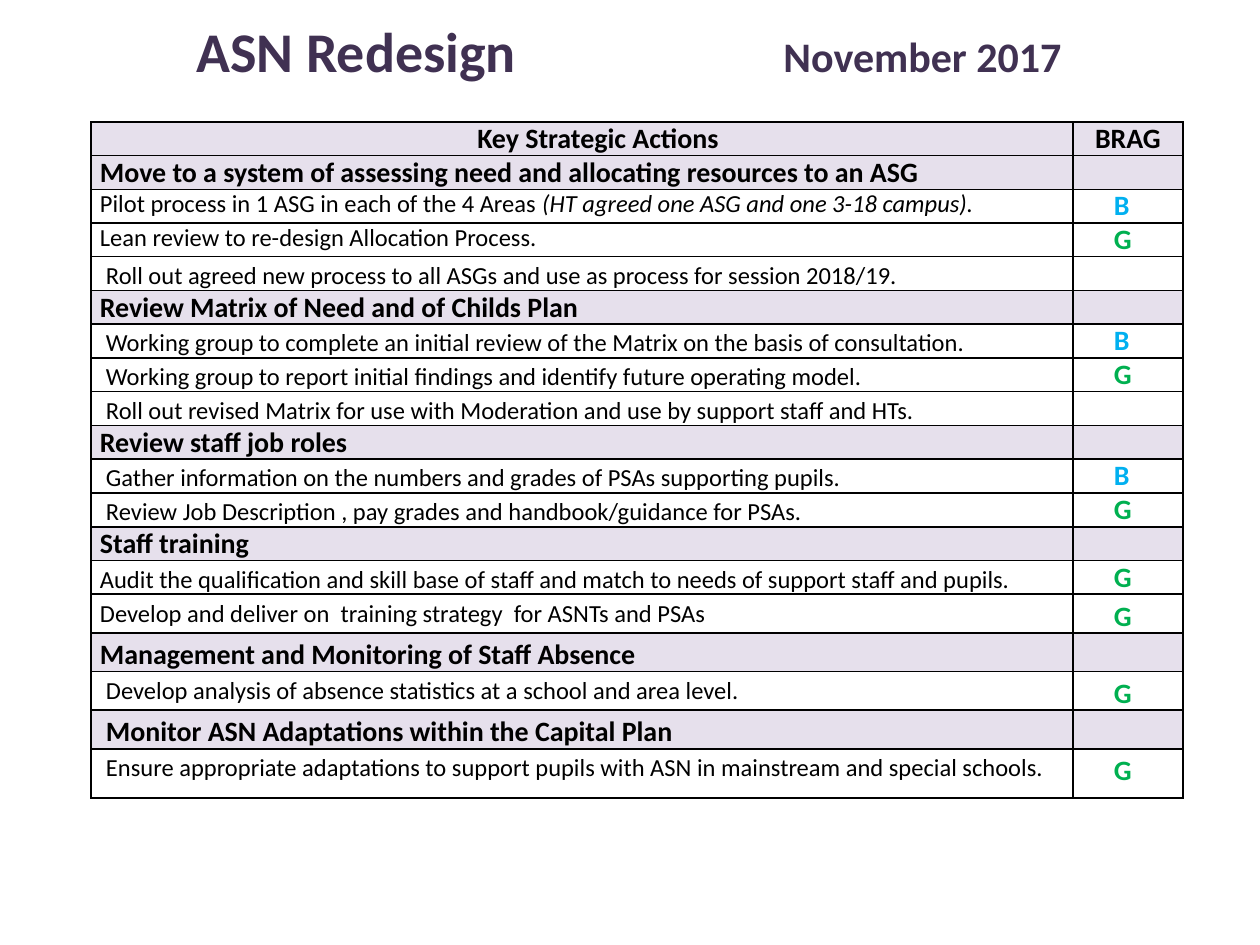
import pptx
import pptx.util
import pptx.dml.color
import pptx.enum.text
import lxml.etree
import pptx.oxml.ns

EMU_PER_PX = 914400 / 126
PURPLE = pptx.dml.color.RGBColor(0x40, 0x31, 0x52)
LILAC = pptx.dml.color.RGBColor(0xE6, 0xE0, 0xEC)
BLACK = pptx.dml.color.RGBColor(0, 0, 0)
MARK_COLOURS = {
    "B": pptx.dml.color.RGBColor(0x00, 0xB0, 0xF0),
    "G": pptx.dml.color.RGBColor(0x00, 0xB0, 0x50),
}
CENTRE = pptx.enum.text.PP_ALIGN.CENTER
qn = pptx.oxml.ns.qn


def px(length):
    return pptx.util.Emu(round(length * EMU_PER_PX))


def write(paragraph, text, size, colour, bold, italic=False):
    run = paragraph.add_run()
    run.text = text
    look = {"name": "Calibri", "size": pptx.util.Pt(size), "bold": bold, "italic": italic}
    for attribute, value in look.items():
        setattr(run.font, attribute, value)
    run.font.color.rgb = colour


deck = pptx.Presentation()
deck.slide_width, deck.slide_height = px(1260), px(945)
slide = deck.slides.add_slide(deck.slide_layouts[6])

# Title and date
for text, left, top, width, height, size in [
    ("ASN Redesign", 184, 10, 362, 81, 32),
    ("November 2017", 771, 24, 310, 63, 24),
]:
    frame = slide.shapes.add_textbox(px(left), px(top), px(width), px(height)).text_frame
    frame.word_wrap = True
    write(frame.paragraphs[0], text, size, PURPLE, True)

# Action plan: text, mark, is heading, side inset, line spacing, mark spacing, row height
NEAR, FAR = 9, 15
actions = [
    ("Key Strategic Actions", "BRAG", True, NEAR, 1, 1, 33),
    ("Move to a system of assessing need and allocating resources to an ASG", "", True, NEAR, 1, 1, 33),
    ("Pilot process in 1 ASG in each of the 4 Areas |(HT agreed one ASG and one 3-18 campus).", "B", False, NEAR, 1, 1, 33),
    ("Lean review to re-design Allocation Process.", "G", False, NEAR, 1, 1, 33),
    ("Roll out agreed new process to all ASGs and use as process for session 2018/19.", "", False, FAR, 1.15, 1, 33),
    ("Review Matrix of Need and of Childs Plan", "", True, NEAR, 1, 1, 33),
    ("Working group to complete an initial review of the Matrix on the basis of consultation.", "B", False, FAR, 1.15, 1, 33),
    ("Working group to report initial findings and identify future operating model.", "G", False, FAR, 1.15, 1, 33),
    ("Roll out revised Matrix for use with Moderation and use by support staff and HTs.", "", False, FAR, 1.15, 1, 33),
    ("Review staff job roles", "", True, NEAR, 1, 1, 33),
    ("Gather information on the numbers and grades of PSAs supporting pupils.", "B", False, FAR, 1.15, 1, 33),
    ("Review Job Description , pay grades and handbook/guidance for PSAs.", "G", False, FAR, 1.15, 1, 33),
    ("Staff training", "", True, NEAR, 1, 1, 33),
    ("Audit the qualification and skill base of staff and match to needs of support staff and pupils.", "G", False, NEAR, 1.15, 1, 33),
    ("Develop and deliver on  training strategy  for ASNTs and PSAs", "G", False, NEAR, 1.15, 1.15, 38),
    ("Management and Monitoring of Staff Absence", "", True, NEAR, 1.15, 1, 38),
    ("Develop analysis of absence statistics at a school and area level.", "G", False, FAR, 1.15, 1.15, 38),
    ("Monitor ASN Adaptations within the Capital Plan", "", True, FAR, 1.15, 1, 38),
    ("Ensure appropriate adaptations to support pupils with ASN in mainstream and special schools.", "G", False, FAR, 1.15, 1.15, 49),
]
total_height = sum(action[-1] for action in actions)
plan = slide.shapes.add_table(len(actions), 2, px(91), px(122), px(1092), px(total_height)).table
plan.first_row = plan.horz_banding = False
plan.columns[0].width, plan.columns[1].width = px(982), px(110)

for row, (text, mark, heading, inset, spacing, mark_spacing, height) in enumerate(actions):
    plan.rows[row].height = px(height)
    for cell, side, line_spacing in zip(plan.rows[row].cells, (inset, NEAR), (spacing, mark_spacing)):
        margins = {"margin_left": px(side), "margin_right": px(side), "margin_top": 0, "margin_bottom": 0}
        for attribute, value in margins.items():
            setattr(cell, attribute, value)
        # Black rule on every edge
        properties = cell._tc.get_or_add_tcPr()
        for edge in ("a:lnL", "a:lnR", "a:lnT", "a:lnB"):
            rule = lxml.etree.SubElement(properties, qn(edge), w="12700")
            paint = lxml.etree.SubElement(rule, qn("a:solidFill"))
            lxml.etree.SubElement(paint, qn("a:srgbClr"), val="000000")
        if heading:
            cell.fill.solid()
            cell.fill.fore_color.rgb = LILAC
        else:
            cell.fill.background()
        cell.text_frame.paragraphs[0].line_spacing = line_spacing

    action_line, mark_line = [cell.text_frame.paragraphs[0] for cell in plan.rows[row].cells]
    if inset == FAR:
        action_line.space_after = pptx.util.Pt(10)
    for part, piece in enumerate(text.split("|")):
        write(action_line, piece, 16 if heading else 14, BLACK, heading, part == 1)

    if mark:
        write(mark_line, mark, 16, MARK_COLOURS.get(mark, BLACK), True)
    else:
        # Keeps an empty cell from stretching its row
        lxml.etree.SubElement(mark_line._p, qn("a:endParaRPr"), sz="1400")
    if mark in MARK_COLOURS:
        mark_line._p.get_or_add_pPr().set("marL", str(px(32)))
        mark_line._p.get_or_add_pPr().set("indent", "0")
    if row == 0:
        action_line.alignment = mark_line.alignment = CENTRE
        action_line._p.get_or_add_pPr().set("marL", str(px(32)))
        action_line._p.get_or_add_pPr().set("indent", "0")

deck.save("out.pptx")
